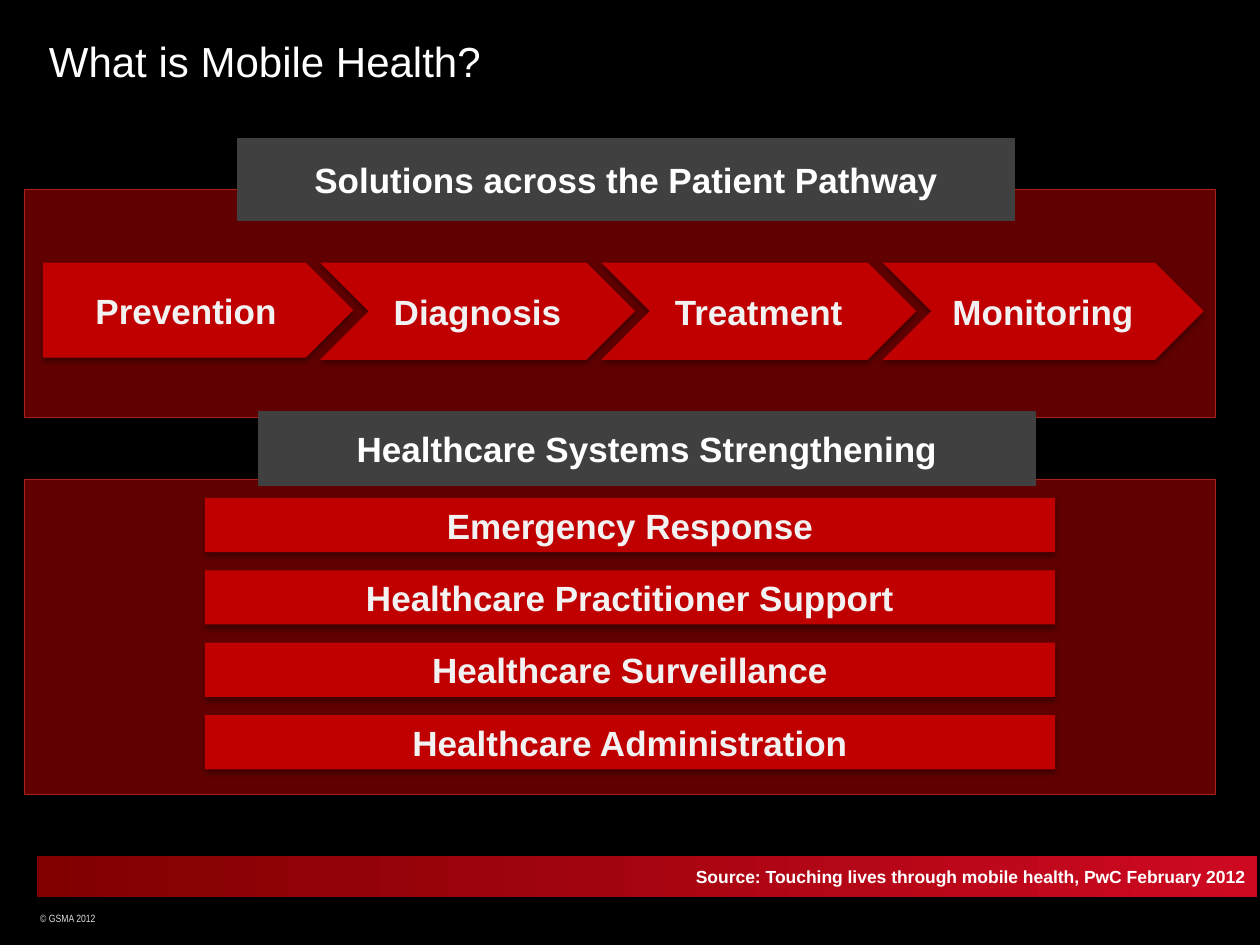
from dataclasses import dataclass
from typing import Optional

from lxml import etree
from pptx import Presentation
from pptx.dml.color import RGBColor
from pptx.enum import shapes, text
from pptx.oxml import ns
from pptx.slide import Slide
from pptx.util import Pt

SHAPE = shapes.MSO_SHAPE
ALIGN = text.PP_ALIGN
ANCHOR = text.MSO_ANCHOR


@dataclass(frozen=True)
class Theme:
    black: str = "000000"
    white: str = "FFFFFF"
    label: str = "F2F2F2"
    copyright: str = "DDDDDD"
    red: str = "C00000"
    panel_edge: str = "A62216"
    heading: str = "404040"
    source_from: str = "800000"
    source_to: str = "CD0921"
    font: str = "Arial"
    narrow_font: str = "Arial Narrow"
    title_size: float = 24
    label_size: float = 20
    source_size: float = 10
    copyright_size: float = 6


@dataclass(frozen=True)
class Box:
    left: float
    top: float
    width: float
    height: float

    def lengths(self) -> tuple:
        return Pt(self.left), Pt(self.top), Pt(self.width), Pt(self.height)


@dataclass(frozen=True)
class Shadow:
    opacity: int  # percent
    blur: float
    distance: float
    angle: int


@dataclass(frozen=True)
class Step:
    label: str
    box: Box
    kind: int = SHAPE.CHEVRON


THEME = Theme()
PANEL_SHADOW = Shadow(40, 4, 3, 45)
RAISED = Shadow(35, 3.1, 1.8, 90)


def rgb(value: str) -> RGBColor:
    return RGBColor.from_string(value)


def add_child(parent, tag: str, **attributes):
    return etree.SubElement(parent, ns.qn(tag), **attributes)


def write(shape, words: str, size: float, color: str, bold: bool = True,
          align: int = ALIGN.CENTER, font: str = THEME.font) -> None:
    frame = shape.text_frame
    frame.text = words
    paragraph = frame.paragraphs[0]
    paragraph.alignment = align
    style = paragraph.runs[0].font
    style.name, style.size, style.bold = font, Pt(size), bold
    style.color.rgb = rgb(color)


def draw_shape(slide: Slide, box: Box, fill: str, kind: int = SHAPE.RECTANGLE,
               shadow: Optional[Shadow] = None):
    shape = slide.shapes.add_shape(kind, *box.lengths())
    shape.fill.solid()
    shape.fill.fore_color.rgb = rgb(fill)
    shape.line.fill.background()
    shape.shadow.inherit = False
    shape.text_frame.vertical_anchor = ANCHOR.MIDDLE
    if shadow:
        effects = shape._element.spPr.find(ns.qn("a:effectLst"))
        outer = add_child(effects, "a:outerShdw", blurRad=str(Pt(shadow.blur)),
                          dist=str(Pt(shadow.distance)),
                          dir=str(shadow.angle * 60000), rotWithShape="0")
        color = add_child(outer, "a:srgbClr", val=THEME.black)
        add_child(color, "a:alpha", val=str(shadow.opacity * 1000))
    return shape


def draw_text(slide: Slide, box: Box, words: str, size: float, color: str,
              font: str = THEME.font):
    caption = slide.shapes.add_textbox(*box.lengths())
    caption.text_frame.word_wrap = True
    write(caption, words, size, color, False, ALIGN.LEFT, font)
    return caption


def draw_panel(slide: Slide, top: float, height: float) -> None:
    panel = draw_shape(slide, Box(13.7, top, 681, height), THEME.red,
                       shadow=PANEL_SHADOW)
    panel.line.color.rgb = rgb(THEME.panel_edge)
    panel.line.width = Pt(0.25)
    color = panel._element.spPr.find(ns.qn("a:solidFill"))[0]
    add_child(color, "a:alpha", val="50000")


def draw_heading(slide: Slide, words: str, box: Box) -> None:
    heading = draw_shape(slide, box, THEME.heading)
    heading.line.color.rgb = rgb(THEME.heading)
    heading.line.width = Pt(0.75)
    frame = heading.text_frame
    frame.margin_left = frame.margin_right = 0
    frame.margin_top = frame.margin_bottom = 0
    frame.word_wrap = False
    write(heading, words, THEME.label_size, THEME.white)


def draw_step(slide: Slide, step: Step) -> None:
    shape = draw_shape(slide, step.box, THEME.red, step.kind, RAISED)
    write(shape, step.label, THEME.label_size, THEME.label)


def draw_source(slide: Slide, words: str) -> None:
    source = draw_shape(slide, Box(20.9, 489.4, 697.5, 23.2), THEME.source_to,
                        shadow=RAISED)
    source.fill.gradient()
    source.fill.gradient_angle = 0
    for stop, position, color in zip(source.fill.gradient_stops, (0, 1),
                                     (THEME.source_from, THEME.source_to)):
        stop.position = position
        stop.color.rgb = rgb(color)
    write(source, words, THEME.source_size, THEME.white, align=ALIGN.RIGHT)


def main() -> None:
    deck = Presentation()
    deck.slide_width, deck.slide_height = Pt(720), Pt(540)
    slide = deck.slides.add_slide(deck.slide_layouts[6])
    slide.background.fill.solid()
    slide.background.fill.fore_color.rgb = rgb(THEME.black)

    # Title and copyright
    draw_text(slide, Box(20.9, 16.6, 634, 36), "What is Mobile Health?",
              THEME.title_size, THEME.white)
    notice = draw_text(slide, Box(22.3, 517.7, 112.3, 14.4), "© GSMA 2012",
                       THEME.copyright_size, THEME.copyright,
                       THEME.narrow_font)
    notice.text_frame.margin_left = Pt(0.7)

    # Panels with their headings
    draw_panel(slide, 108, 130.5)
    draw_panel(slide, 273.7, 180)
    draw_heading(slide, "Solutions across the Patient Pathway",
                 Box(135.8, 79.2, 444, 46.8))
    draw_heading(slide, "Healthcare Systems Strengthening",
                 Box(147.7, 235.2, 444, 42))

    # Patient pathway
    first, pitch, top = 182.9, 160.7, 150
    draw_step(slide, Step("Prevention", Box(24.5, top, 177.4, 54.4),
                          SHAPE.PENTAGON))
    chevrons = (("Diagnosis", 180), ("Treatment", 180), ("Monitoring", 183.5))
    for i, (label, width) in enumerate(chevrons):
        draw_step(slide, Step(label, Box(first + i * pitch, top, width, 55.6)))

    # Systems strengthening
    systems = ("Emergency Response", "Healthcare Practitioner Support",
               "Healthcare Surveillance", "Healthcare Administration")
    for i, label in enumerate(systems):
        bar = Box(117, 284.5 + i * 41.4, 486, 31)
        draw_step(slide, Step(label, bar, SHAPE.RECTANGLE))

    # Source
    draw_source(slide, "Source: Touching lives through mobile health, "
                       "PwC February 2012")
    deck.save("out.pptx")


if __name__ == "__main__":
    main()
